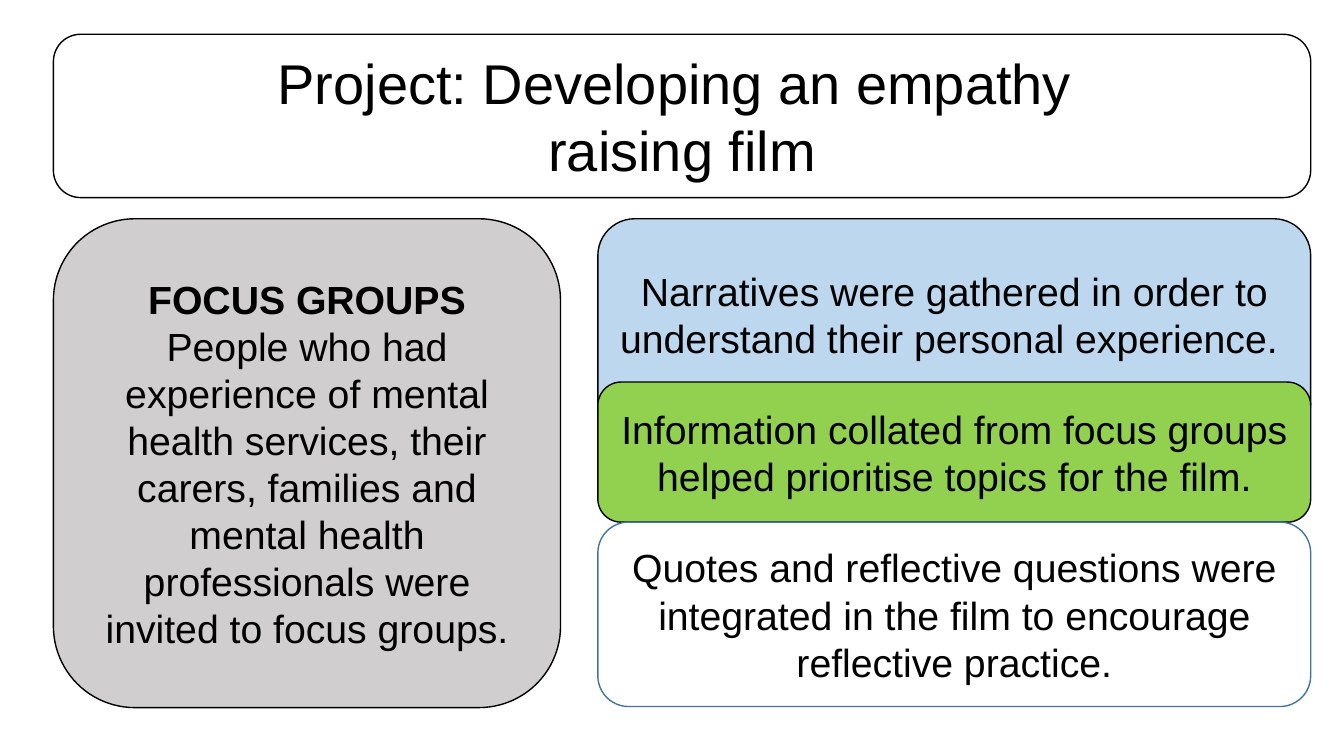
from dataclasses import dataclass

from pptx import Presentation
from pptx.dml.color import RGBColor
from pptx.enum.shapes import MSO_SHAPE as Shape
from pptx.enum.text import MSO_ANCHOR as Anchor, PP_ALIGN as Align
from pptx.util import Emu, Pt

EMU_PER_PX = 9144  # 100 px to the inch


@dataclass(frozen=True)
class Theme:
    font: str = "Arial"
    title_size: int = 40
    body_size: int = 28
    line_width: int = 1
    black: str = "000000"
    white: str = "FFFFFF"
    grey: str = "D0CECE"
    blue: str = "BDD7EE"
    green: str = "92D050"
    outline_blue: str = "43739E"


def px(length):
    return Emu(length * EMU_PER_PX)


class SlideBuilder:
    def __init__(self, slide, theme):
        self.slide = slide
        self.theme = theme

    def card(self, box, fill, paragraphs, size=None, line=None, bottom_inset=5):
        """Rounded box; each paragraph is a list of (text, bold) runs."""
        shape = self.slide.shapes.add_shape(
            Shape.ROUNDED_RECTANGLE, *(px(length) for length in box))
        shape.shadow.inherit = False
        shape.fill.solid()
        shape.fill.fore_color.rgb = RGBColor.from_string(fill)
        shape.line.color.rgb = RGBColor.from_string(line or self.theme.black)
        shape.line.width = Pt(self.theme.line_width)

        frame = shape.text_frame
        frame.word_wrap = True
        frame.vertical_anchor = Anchor.MIDDLE
        frame.margin_bottom = px(bottom_inset)
        for index, runs in enumerate(paragraphs):
            paragraph = frame.add_paragraph() if index else frame.paragraphs[0]
            paragraph.alignment = Align.CENTER
            for text, bold in runs:
                self.run(paragraph, text, bold, size or self.theme.body_size)

    def run(self, paragraph, text, bold, size):
        run = paragraph.add_run()
        run.text = text
        run.font.name = self.theme.font
        run.font.size = Pt(size)
        run.font.bold = bold
        run.font.color.rgb = RGBColor.from_string(self.theme.black)


def main():
    theme = Theme()
    presentation = Presentation()
    presentation.slide_width, presentation.slide_height = px(1333), px(750)
    slide = presentation.slides.add_slide(presentation.slide_layouts[6])
    builder = SlideBuilder(slide, theme)

    left, top = 53, 217
    right_column, right_width = 593, 707

    # Focus groups panel
    builder.card((left, top, 503, 485), theme.grey, [
        [("FOCUS GROUPS", True)],
        [("People who had experience of mental health services, their carers, "
          "families and mental health professionals were invited to focus "
          "groups.", False)],
    ])

    # Right column: stacked steps, the second overlapping the first
    steps = [
        (top, 219, theme.blue, theme.black, 34,
         "Narratives were gathered in order to understand their personal "
         "experience. "),
        (379, 139, theme.green, theme.black, 5,
         "Information collated from focus groups helped prioritise topics "
         "for the film."),
        (518, 183, theme.white, theme.outline_blue, 5,
         "Quotes and reflective questions were integrated in the film to "
         "encourage reflective practice."),
    ]
    for step_top, height, fill, line, bottom_inset, text in steps:
        builder.card((right_column, step_top, right_width, height), fill,
                     [[(text, False)]], line=line, bottom_inset=bottom_inset)

    # Title
    builder.card((left, 34, 1247, 162), theme.white, [
        [("Project: Developing an empathy ", False)],
        [("raising film", False)],
    ], size=theme.title_size)

    presentation.save("out.pptx")


if __name__ == "__main__":
    main()
